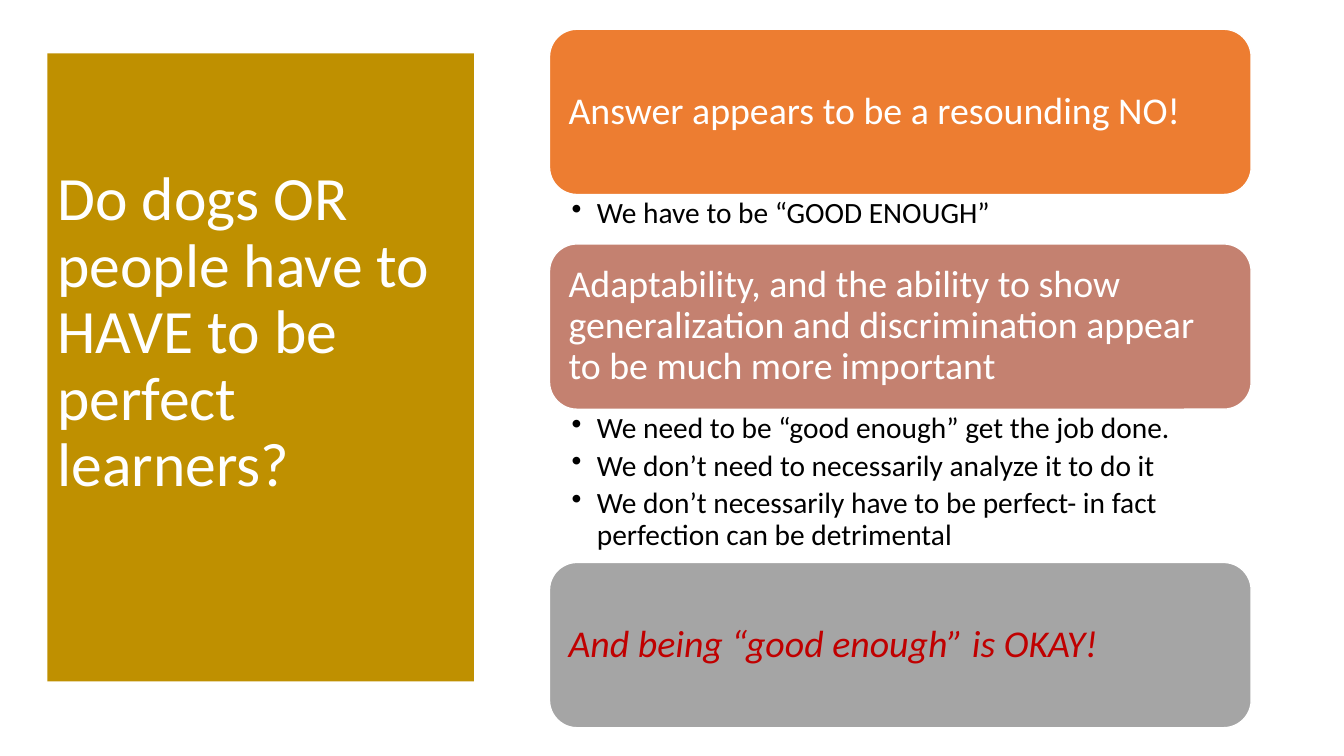
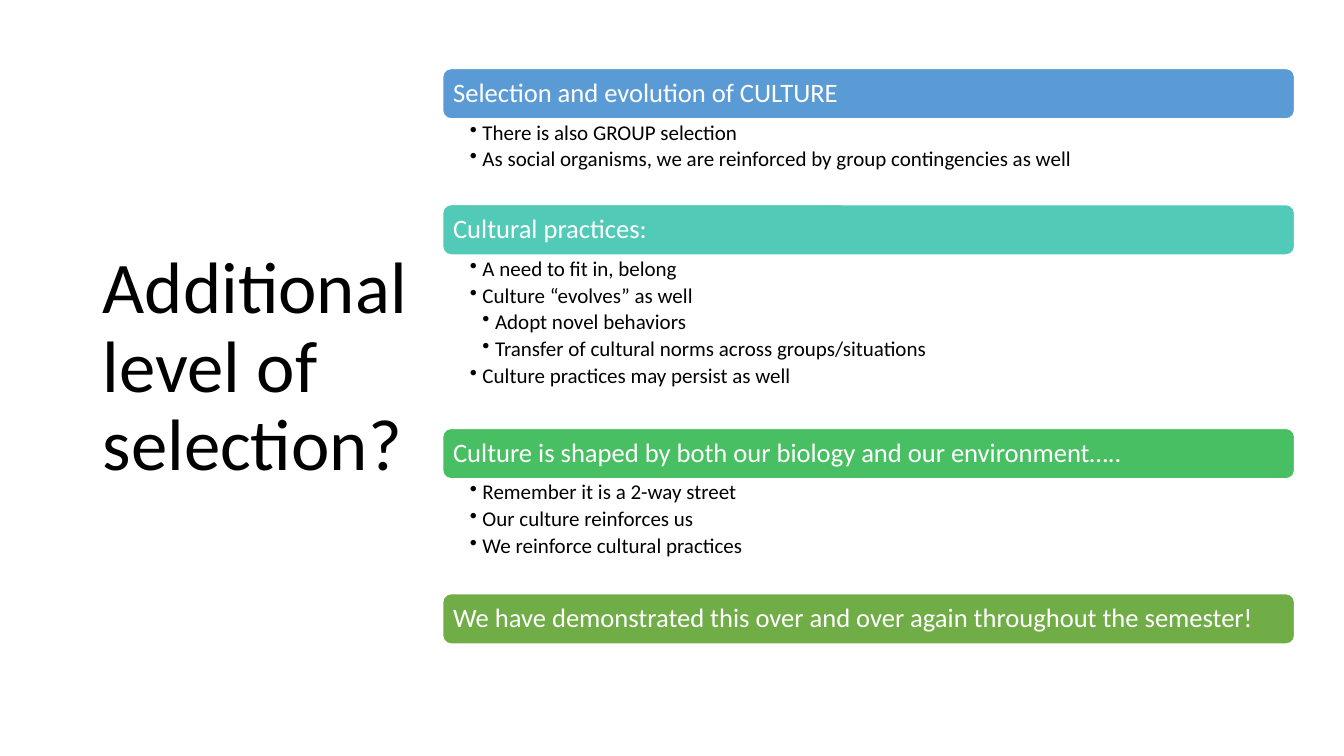
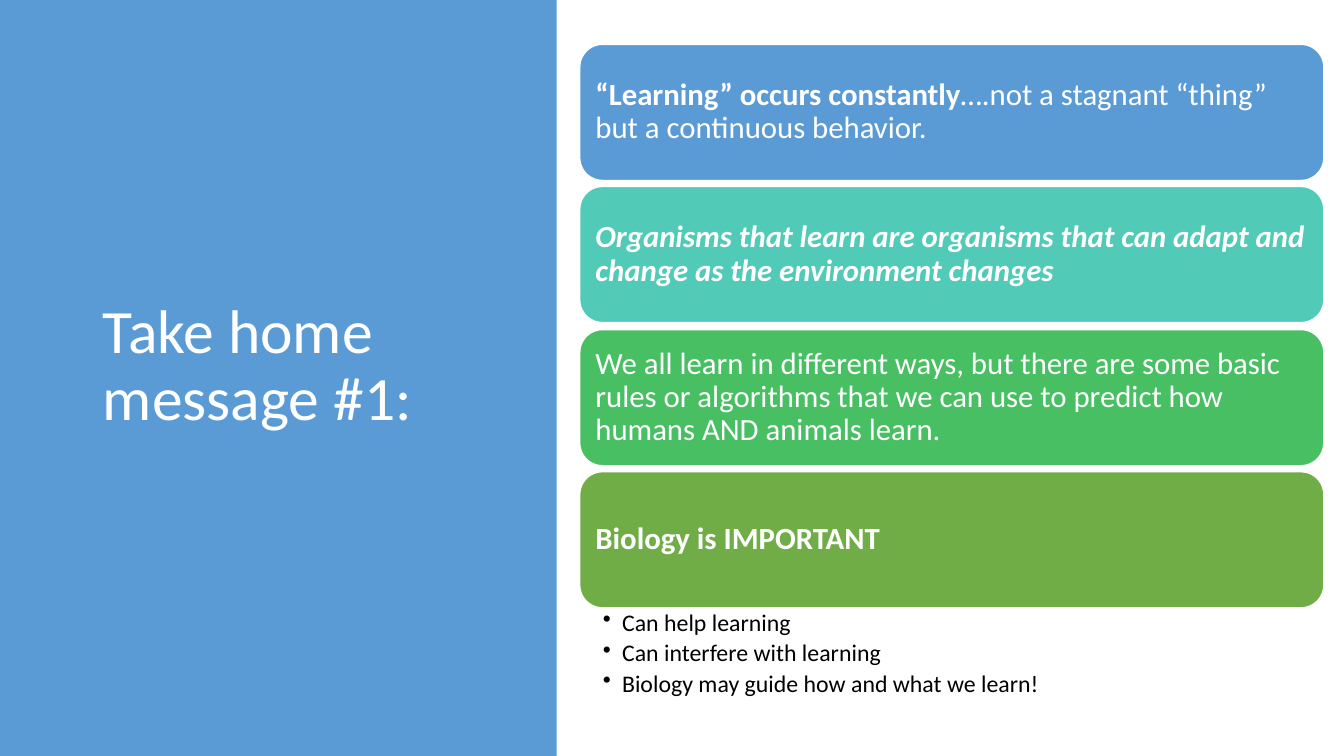
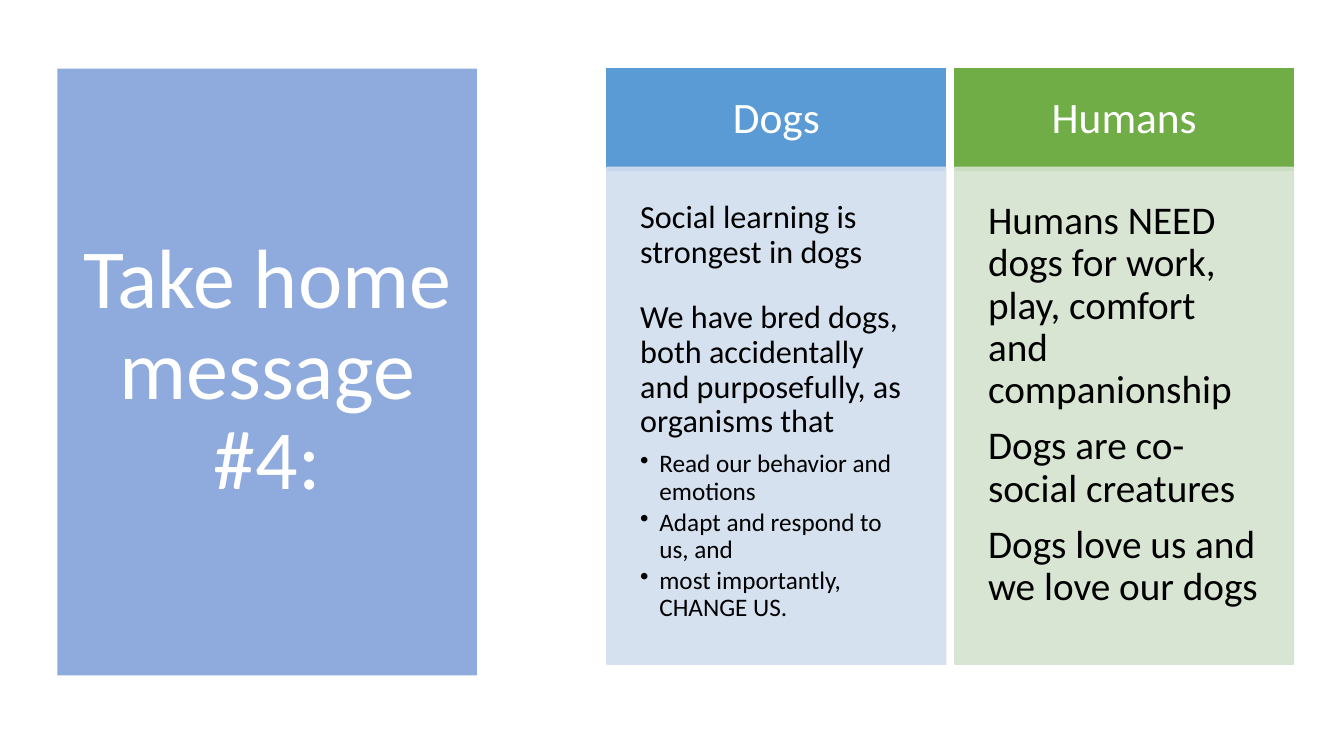
from lxml.etree import SubElement
from pptx import Presentation
from pptx.dml.color import RGBColor
from pptx.enum.shapes import MSO_SHAPE
from pptx.enum.text import MSO_ANCHOR, MSO_AUTO_SIZE, PP_ALIGN
from pptx.oxml.ns import qn
from pptx.util import Emu, Pt

# Shared style: lengths are px, 100 to the inch
EMU_PER_PX = 9144
FONT = "Calibri"
WHITE, BLACK = "FFFFFF", "000000"
BLUE, TEAL, GREEN, OLIVE = "5B9BD5", "52CAB8", "49BF64", "70AD47"


def px(length):
    return Emu(int(length * EMU_PER_PX))


def colour(value):
    return RGBColor.from_string(value)


def paint(target, value, opacity=100):
    """Give a fill a solid colour, optionally see-through."""
    target.solid()
    target.fore_color.rgb = colour(value)
    if opacity < 100:
        choice = target._xPr.find(qn("a:solidFill"))[0]
        SubElement(choice, qn("a:alpha"), val=str(opacity * 1000))


def write(frame, text, size=20, ink=BLACK, lead="", bold=False, italic=False,
          align=PP_ALIGN.LEFT, after=0, level=0, step=0):
    """Add one paragraph; lead is a bold opening, level above 0 adds a bullet."""
    para = frame.paragraphs[0]
    if para.runs:
        para = frame.add_paragraph()
    para.alignment = align
    para.line_spacing = 0.9
    para.space_after = Pt(after)
    if level:
        para.level = level
        properties = para._p.get_or_add_pPr()
        properties.set("marL", str(px(step * level)))
        properties.set("indent", str(-px(step)))
        SubElement(properties, qn("a:buChar"), char="•")
    for words, heavy in ((lead, True), (text, bold)):
        if words:
            span = para.add_run()
            span.text = words
            span.font.name = FONT
            span.font.size = Pt(size)
            span.font.bold = heavy
            span.font.italic = italic
            span.font.color.rgb = colour(ink)


class Slides:
    def __init__(self):
        self.deck = Presentation()
        self.deck.slide_width, self.deck.slide_height = px(1333), px(750)
        self.page = None

    def new_page(self):
        self.page = self.deck.slides.add_slide(self.deck.slide_layouts[5])

    def frame(self, box, insets, anchor=MSO_ANCHOR.TOP):
        frame = box.text_frame
        frame.word_wrap = True
        frame.auto_size = MSO_AUTO_SIZE.NONE
        frame.vertical_anchor = anchor
        (frame.margin_left, frame.margin_top,
         frame.margin_right, frame.margin_bottom) = map(px, insets)
        return frame

    def title(self, text, place, size, ink=WHITE, fill=None,
              align=PP_ALIGN.LEFT, bottom=5):
        box = self.page.shapes.title
        box.left, box.top, box.width, box.height = map(px, place)
        if fill:
            paint(box.fill, fill)
        frame = self.frame(box, (10, 5, 10, bottom), MSO_ANCHOR.MIDDLE)
        write(frame, text, size=size, ink=ink, align=align)
        # Bring the title in front of what is already drawn
        box._element.getparent().append(box._element)

    def block(self, place, fill, line=None, opacity=100, kind=MSO_SHAPE.RECTANGLE):
        box = self.page.shapes.add_shape(kind, *map(px, place))
        box.shadow.inherit = False
        paint(box.fill, fill, opacity)
        if line:
            box.line.width = Pt(1)
            paint(box.line.fill, line, opacity)
        else:
            box.line.fill.background()
        return box

    def card(self, place, fill, inset, text, **style):
        box = self.block(place, fill, WHITE, kind=MSO_SHAPE.ROUNDED_RECTANGLE)
        frame = self.frame(box, [inset] * 4, MSO_ANCHOR.MIDDLE)
        write(frame, text, **{"ink": WHITE, **style})

    def bullets(self, place, insets, items, size, step):
        box = self.page.shapes.add_textbox(*map(px, place))
        frame = self.frame(box, insets)
        for level, text in items:
            write(frame, text, size=size, after=size * 0.2, level=level, step=step)

    def stack(self, left, top, width, height, inset, size, list_style, cards):
        """Cards downwards: fill, text, format, room below, bullets in that room."""
        for fill, text, style, room, items in cards:
            self.card((left, top, width, height), fill, inset, text, size=size, **style)
            top += height
            if items:
                self.bullets((left, top, width, room), items=items, **list_style)
            top += room

    def column(self, left, heading, fill, tint, paragraphs):
        top, width, head_height = 68, 336, 101
        head = self.block((left, top, width, head_height), fill, fill)
        write(self.frame(head, [27] * 4, MSO_ANCHOR.MIDDLE), heading,
              size=31, ink=WHITE, align=PP_ALIGN.CENTER)
        body = self.block((left, 166, width, 493), tint, tint, opacity=90)
        frame = self.frame(body, [33] * 4)
        for text, style in paragraphs:
            write(frame, text, **style)


def main():
    slides = Slides()

    # Good enough
    slides.new_page()
    slides.title("Do dogs OR people have to HAVE to be perfect learners?",
                 (47, 53, 423, 623), 44, fill="BF9000", bottom=72)
    slides.stack(545, 29, 696, 164, 11, 27,
                 dict(insets=(22, 4, 21, 4), size=21, step=25), [
        ("ED7D31", "Answer appears to be a resounding NO!", {}, 49,
         [(1, "We have to be “GOOD ENOUGH”")]),
        ("C48170", "Adaptability, and the ability to show generalization and "
         "discrimination appear to be much more important", {}, 152,
         [(1, "We need to be “good enough” get the job done."),
          (1, "We don’t need to necessarily analyze it to do it"),
          (1, "We don’t necessarily have to be perfect- in fact perfection "
              "can be detrimental")]),
        ("A5A5A5", "And being “good enough” is OKAY!",
         dict(ink="C00000", italic=True), 0, []),
    ])

    # Selection of culture
    slides.new_page()
    slides.title("Additional level of selection?", (92, 61, 369, 609), 52, ink=BLACK)
    slides.stack(439, 68, 845, 50, 8, 19,
                 dict(insets=(27, 3, 15, 3), size=15, step=12.5), [
        (BLUE, "Selection and evolution of CULTURE", {}, 85,
         [(1, "There is also GROUP selection"),
          (1, "As social organisms, we are reinforced by group contingencies as well")]),
        (TEAL, "Cultural practices:", {}, 172,
         [(1, "A need to fit in, belong"),
          (1, "Culture “evolves” as well"),
          (2, "Adopt novel behaviors"),
          (2, "Transfer of cultural norms across groups/situations"),
          (1, "Culture practices may persist as well")]),
        (GREEN, "Culture is shaped by both our biology and our environment…..", {}, 114,
         [(1, "Remember it is a 2-way street"),
          (1, "Our culture reinforces us"),
          (1, "We reinforce cultural practices")]),
        (OLIVE, "We have demonstrated this over and over again throughout the semester!",
         {}, 0, []),
    ])

    # Take home message 1
    slides.new_page()
    slides.block((0, 0, 552, 750), BLUE)
    slides.title("Take home message #1:", (92, 68, 412, 592), 44)
    slides.stack(575, 44, 738, 135, 9, 22,
                 dict(insets=(23, 3, 17, 3), size=17, step=19), [
        (BLUE, "….not a stagnant “thing” but a continuous behavior.",
         dict(lead="“Learning” occurs constantly"), 6, []),
        (TEAL, "Organisms that learn are organisms that can adapt and change "
         "as the environment changes", dict(bold=True, italic=True), 7, []),
        (GREEN, "We all learn in different ways, but there are some basic rules or "
         "algorithms that we can use to predict how humans AND animals learn.",
         {}, 6, []),
        (OLIVE, "Biology is IMPORTANT", dict(bold=True), 97,
         [(1, "Can help learning"),
          (1, "Can interfere with learning"),
          (1, "Biology may guide how and what we learn!")]),
    ])

    # Take home message 4
    slides.new_page()
    slides.title("Take home message #4:", (57, 68, 416, 602), 60,
                 fill="8FAADC", align=PP_ALIGN.CENTER)
    point = dict(size=18, after=2.7, level=1, step=19)
    statement = dict(size=28, after=9.8)
    slides.column(602, "Dogs", BLUE, "D2DEEF", [
        ("Social learning is strongest in dogs", dict(size=23, after=22)),
        ("We have bred dogs, both accidentally and purposefully, as organisms that",
         dict(size=23, after=8)),
        ("Read our behavior and emotions", point),
        ("Adapt and respond to us, and", point),
        ("most importantly, CHANGE US.", point),
    ])
    slides.column(947, "Humans", OLIVE, "D5E3CF", [
        ("Humans NEED dogs for work, play, comfort and companionship", statement),
        ("Dogs are co-social creatures", statement),
        ("Dogs love us and we love our dogs", statement),
    ])

    slides.deck.save("out.pptx")


if __name__ == "__main__":
    main()
